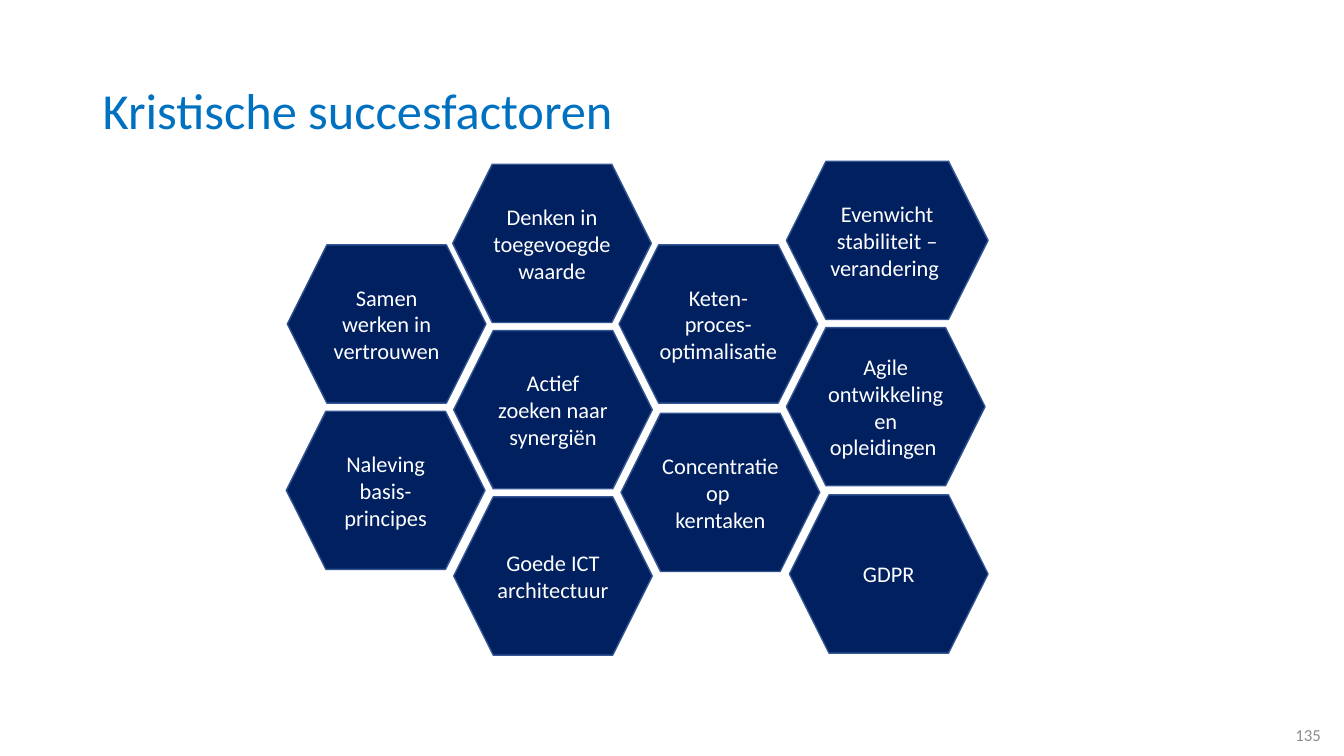
from pptx import Presentation
from pptx import util as u
from pptx.dml.color import RGBColor
from pptx.enum import shapes, text

PX = 9144
NAVY = RGBColor(0x00, 0x20, 0x60)
EDGE = RGBColor(0x32, 0x54, 0x91)
BLUE = RGBColor(0x00, 0x70, 0xC0)
GREY = RGBColor(0x8C, 0x8C, 0x8C)
WHITE = RGBColor(0xFF, 0xFF, 0xFF)

LEFT = text.PP_ALIGN.LEFT
MID = text.PP_ALIGN.CENTER
RIGHT = text.PP_ALIGN.RIGHT

FACTORS = [
    (285, 243, 197, ["Samen werken in vertrouwen"]),
    (450, 328, 197, ["Actief zoeken naar synergiën"]),
    (284, 408, 197, ["Naleving basis- principes"]),
    (450, 493, 197, ["Goede ICT architectuur"]),
    (616, 410, 197, ["Concentratie op ", "kerntaken"]),
    (614, 243, 197, ["Keten-", "proces-", "optimalisatie "]),
    (780, 325, 197, ["Agile ontwikkeling en opleidingen "]),
    (780, 160, 200, ["Evenwicht stabiliteit – verandering "]),
    (449, 163, 197, ["Denken in toegevoegde waarde"]),
    (783, 491, 197, ["GDPR"]),
]


class Deck:
    font = "Calibri"

    def __init__(self, width, height):
        self.prs = Presentation()
        self.prs.slide_width = width * PX
        self.prs.slide_height = height * PX
        self.slide = self.prs.slides.add_slide(self.prs.slide_layouts[6])

    def fill_text(self, shape, lines, size, color, align, space=None):
        frame = shape.text_frame
        frame.word_wrap = True
        frame.vertical_anchor = text.MSO_ANCHOR.MIDDLE
        frame.text = "\n".join(lines)
        for para in frame.paragraphs:
            para.alignment = align
            para.line_spacing = space
            para.font.name = self.font
            para.font.size = u.Pt(size)
            para.font.color.rgb = color

    def label(self, box, words, size, color, align, space=None):
        shape = self.slide.shapes.add_textbox(*(n * PX for n in box))
        self.fill_text(shape, [words], size, color, align, space)

    def hexagon(self, box, lines):
        shape = self.slide.shapes.add_shape(
            shapes.MSO_SHAPE.HEXAGON, *(n * PX for n in box))
        shape.shadow.inherit = False
        shape.fill.solid()
        shape.fill.fore_color.rgb = NAVY
        shape.line.color.rgb = EDGE
        shape.line.width = u.Pt(1)
        self.fill_text(shape, lines, 16, WHITE, MID)


def main():
    deck = Deck(1333, 750)
    deck.label((92, 40, 1150, 145), "Kristische succesfactoren",
               36, BLUE, LEFT, 0.9)
    for left, top, width, lines in FACTORS:
        deck.hexagon((left, top, width, 157), lines)
    deck.label((1020, 709, 300, 40), "135", 12, GREY, RIGHT)
    deck.prs.save("out.pptx")


if __name__ == "__main__":
    main()
